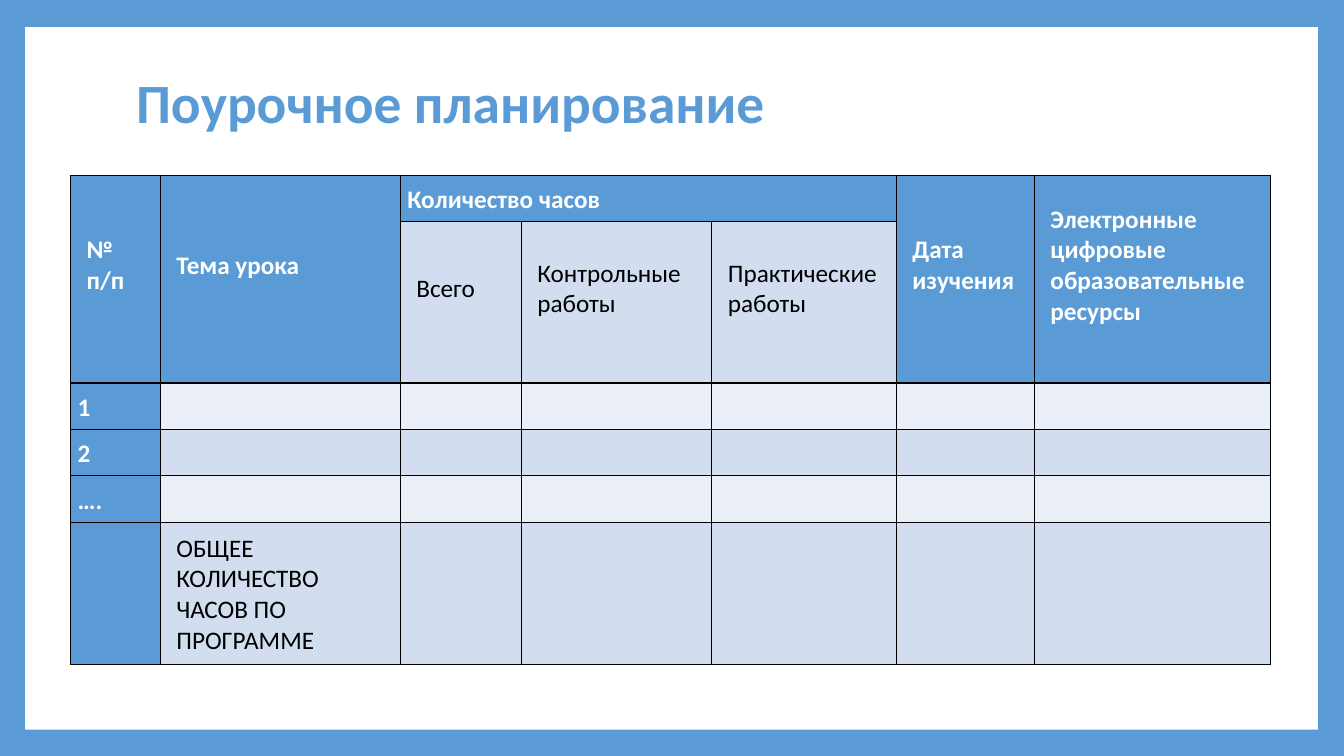
from lxml import etree
from pptx import Presentation
from pptx import util as u
from pptx.dml.color import RGBColor
from pptx.enum import shapes, text
from pptx.oxml import ns

BLUE = RGBColor(0x5B, 0x9B, 0xD5)
WHITE = RGBColor(0xFF, 0xFF, 0xFF)
BLACK = RGBColor(0, 0, 0)
BAND_DARK = RGBColor(0xD2, 0xDE, 0xEF)
BAND_LIGHT = RGBColor(0xEA, 0xEF, 0xF7)

COLUMN_WIDTHS = [0.89, 2.38, 1.2, 1.89, 1.83, 1.37, 2.34]
ROW_HEIGHTS = [0.46, 1.6, 0.46, 0.46, 0.46, 1.41]
HEADER_ROWS = 2
HOURS_COLUMNS = range(2, 5)
LESSON_PLAN = [
    ["№ п/п", "Тема урока", "Количество часов", "", "", "Дата изучения",
     "Электронные цифровые образовательные ресурсы"],
    ["", "", "Всего", "Контрольные работы", "Практические работы", "", ""],
    ["1"] + [""] * 6,
    ["2"] + [""] * 6,
    ["…."] + [""] * 6,
    ["", "ОБЩЕЕ КОЛИЧЕСТВО ЧАСОВ ПО ПРОГРАММЕ"] + [""] * 5,
]


def write(frame, words, size=18, color=BLACK, bold=False, indent=0.0):
    paragraph = frame.paragraphs[0]
    paragraph.alignment = text.PP_ALIGN.LEFT
    if indent:
        paragraph._p.get_or_add_pPr().set("marL", str(u.Inches(indent)))
    font = paragraph.font
    if words:
        run = paragraph.add_run()
        run.text = words
        font = run.font
    font.name = "Calibri"
    font.size = u.Pt(size)
    font.bold = bold
    font.color.rgb = color


def add_borders(cell):
    """Draw a thin black line on all four sides, ahead of the cell's fill."""
    properties = cell._tc.get_or_add_tcPr()
    for position, side in enumerate(("lnL", "lnR", "lnT", "lnB")):
        line = etree.Element(ns.qn(f"a:{side}"), w=str(u.Pt(1)))
        fill = etree.SubElement(line, ns.qn("a:solidFill"))
        etree.SubElement(fill, ns.qn("a:srgbClr"), val=str(BLACK))
        properties.insert(position, line)


def add_panel(slide, left, top, width, height):
    panel = slide.shapes.add_shape(
        shapes.MSO_SHAPE.RECTANGLE, u.Inches(left), u.Inches(top),
        u.Inches(width), u.Inches(height))
    panel.shadow.inherit = False
    panel.fill.solid()
    panel.fill.fore_color.rgb = WHITE
    panel.line.fill.background()
    slide.shapes.title.element.addprevious(panel.element)


def place_title(slide, left, top, width, height):
    title = slide.shapes.title
    title.left, title.top = u.Inches(left), u.Inches(top)
    title.width, title.height = u.Inches(width), u.Inches(height)
    frame = title.text_frame
    frame.vertical_anchor = text.MSO_ANCHOR.MIDDLE
    write(frame, "Поурочное планирование", size=39.6, color=BLUE, bold=True)
    frame.paragraphs[0].line_spacing = 0.9


def format_cell(cell, row, column, words):
    in_header = row < HEADER_ROWS
    is_hours_part = row == 1 and column in HOURS_COLUMNS
    is_heading = column == 0 or (in_header and not is_hours_part)
    is_hours_heading = row == 0 and column in HOURS_COLUMNS
    band = BAND_DARK if row % 2 else BAND_LIGHT

    cell.fill.solid()
    cell.fill.fore_color.rgb = BLUE if is_heading else band
    add_borders(cell)
    cell.vertical_anchor = text.MSO_ANCHOR.MIDDLE
    cell.margin_left = cell.margin_right = u.Inches(0.07)
    cell.margin_top = u.Inches(0.03)
    # Tall header cells hold their text one line above the middle.
    raised = in_header and words and not is_hours_heading
    cell.margin_bottom = u.Inches(0.3 if raised else 0)
    indented = raised or (column == 1 and words)
    write(cell.text_frame, words, color=WHITE if is_heading else BLACK,
          bold=is_heading, indent=0.09 if indented else 0)


def add_lesson_plan(slide, left, top):
    table = slide.shapes.add_table(
        len(ROW_HEIGHTS), len(COLUMN_WIDTHS), u.Inches(left), u.Inches(top),
        u.Inches(sum(COLUMN_WIDTHS)), u.Inches(sum(ROW_HEIGHTS))).table
    table.first_col = True
    for column, width in zip(table.columns, COLUMN_WIDTHS):
        column.width = u.Inches(width)
    for row, height in zip(table.rows, ROW_HEIGHTS):
        row.height = u.Inches(height)
    for row, row_words in enumerate(LESSON_PLAN):
        for column, words in enumerate(row_words):
            format_cell(table.cell(row, column), row, column, words)
    for column in range(len(COLUMN_WIDTHS)):
        if column not in HOURS_COLUMNS:
            table.cell(0, column).merge(table.cell(HEADER_ROWS - 1, column))
    table.cell(0, HOURS_COLUMNS[0]).merge(table.cell(0, HOURS_COLUMNS[-1]))


def main():
    presentation = Presentation()
    presentation.slide_width = u.Inches(13.33)
    presentation.slide_height = u.Inches(7.5)
    slide = presentation.slides.add_slide(presentation.slide_layouts[5])
    slide.background.fill.solid()
    slide.background.fill.fore_color.rgb = BLUE
    add_panel(slide, 0.25, 0.27, 12.82, 6.97)
    place_title(slide, 1.25, 0.67, 10.8, 0.75)
    add_lesson_plan(slide, 0.7, 1.74)
    presentation.save("out.pptx")


if __name__ == "__main__":
    main()
